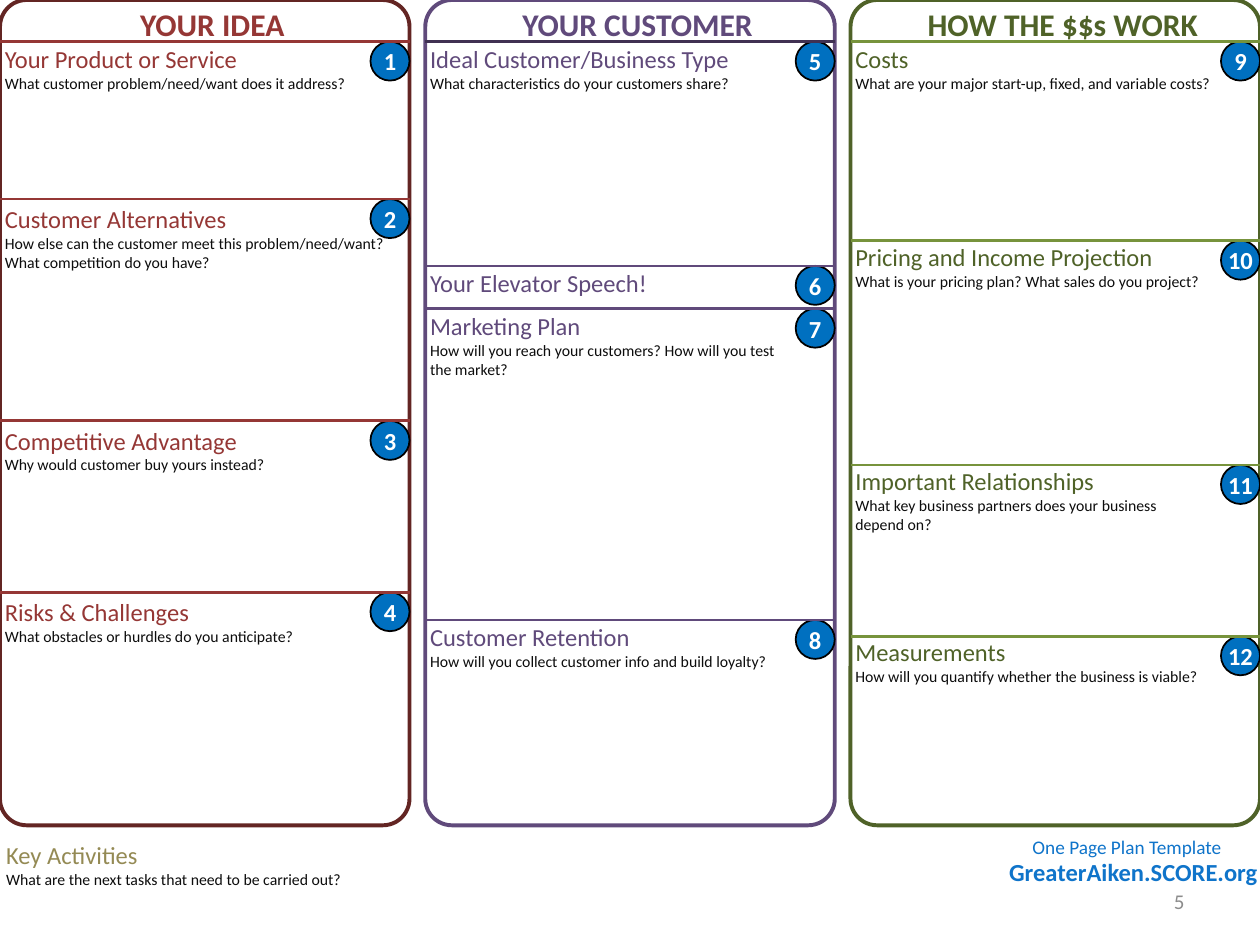
from lxml import etree
from pptx import Presentation
from pptx.dml.color import RGBColor
from pptx.enum.shapes import MSO_CONNECTOR, MSO_SHAPE
from pptx.enum.text import MSO_ANCHOR, PP_ALIGN
from pptx.oxml.ns import qn
from pptx.util import Inches, Pt

LINE = MSO_CONNECTOR.STRAIGHT
ROUND, OVAL = MSO_SHAPE.ROUNDED_RECTANGLE, MSO_SHAPE.OVAL
LEFT, MID, RIGHT = PP_ALIGN.LEFT, PP_ALIGN.CENTER, PP_ALIGN.RIGHT

# Grid: three equal columns across the slide
WIDE, HIGH = 10, 7.5
PITCH, COL = WIDE * 0.3375, WIDE * 0.325
HEAD, BODY = 0.33, 6.55
DOT = 0.31

# Column: title, frame, title colour, rule colours, text offset, notes
# Note: rule height, heading, lines of hint, text width
PLAN = [
    ("YOUR IDEA", "632523", "953735", "953735", "953735", -0.01, [
        (HEAD, "Your Product or Service",
         ["What customer problem/need/want does it address?"], 3.3),
        (1.58, "Customer Alternatives",
         ["How else can the customer meet this problem/need/want?",
          "What competition do you have?"], 3.3),
        (3.34, "Competitive Advantage",
         ["Why would customer buy yours instead?"], 3.3),
        (4.7, "Risks & Challenges",
         ["What obstacles or hurdles do you anticipate?"], 3.3)]),
    ("YOUR CUSTOMER", "604A7B", "604A7B", "403152", "604A7B", -0.03, [
        (HEAD, "Ideal Customer/Business Type",
         ["What characteristics do your customers share?"], 3.3),
        (2.11, "Your Elevator Speech!", [], 3.3),
        (2.45, "Marketing Plan",
         ["How will you reach your customers? How will you test",
          "the market?"], 3.3),
        (4.92, "Customer Retention",
         ["How will you collect customer info and build loyalty?"], 3.3)]),
    ("HOW THE $$s WORK", "4F6228", "4F6228", "77933C", "77933C", -0.04, [
        (HEAD, "Costs",
         ["What are your major start-up, fixed, and variable costs?"], 3.3),
        (1.91, "Pricing and Income Projection",
         ["What is your pricing plan? What sales do you project?"], 3.3),
        (3.69, "Important Relationships",
         ["What key business partners does your business depend on?"], 2.72),
        (5.05, "Measurements",
         ["How will you quantify whether the business is viable?"], 3.3)]),
]


def rgb(code):
    return RGBColor.from_string(code)


def write(x, y, w, h, text, size, color, bold=False, align=LEFT, hints=()):
    box = slide.shapes.add_textbox(*map(Inches, (x, y, w, h)))
    frame = box.text_frame
    frame.word_wrap = True
    para = frame.paragraphs[0]
    para.alignment = align
    for i, (words, pts, tint) in enumerate(
            [(text, size, color)] + [(hint, 9, "0D0D0D") for hint in hints]):
        if i:
            para.add_line_break()
        run = para.add_run()
        run.text = words
        run.font.name = "Calibri"
        run.font.size = Pt(pts)
        run.font.bold = bold
        run.font.color.rgb = rgb(tint)
    return frame


deck = Presentation()
deck.slide_width, deck.slide_height = Inches(WIDE), Inches(HIGH)
slide = deck.slides.add_slide(deck.slide_layouts[6])

# Page number
page = write(7.17, 6.95, 2.33, 0.4, "5", 12, "8C8C8C", align=RIGHT)
page.vertical_anchor = MSO_ANCHOR.MIDDLE

count = 0
for c, (title, edge, ink, top, rule, drop, notes) in enumerate(PLAN):
    x = c * PITCH

    # Frame and title
    card = slide.shapes.add_shape(
        ROUND, Inches(x), 0, Inches(COL), Inches(BODY))
    card.adjustments[0] = 0.065
    card.shadow.inherit = False
    card.fill.background()
    card.line.color.rgb = rgb(edge)
    card.line.width = Pt(2.25)
    write(x + 0.06, -0.01, COL, 0.4, title, 18, ink, True, MID)

    for n, (y, name, hints, width) in enumerate(notes):
        # Numbered badge
        count += 1
        dot = slide.shapes.add_shape(
            OVAL, *map(Inches, (x + COL - DOT, y, DOT, DOT)))
        dot.shadow.inherit = False
        dot.fill.solid()
        dot.fill.fore_color.rgb = rgb("0070C0")
        dot.line.color.rgb = rgb("000000")
        dot.line.width = Pt(1)
        frame = dot.text_frame
        frame.word_wrap = False
        frame.margin_left = frame.margin_right = 0
        frame.margin_top = frame.margin_bottom = 0
        frame.vertical_anchor = MSO_ANCHOR.MIDDLE
        para = frame.paragraphs[0]
        para.text = str(count)
        para.alignment = MID
        para.font.name = "Calibri"
        para.font.size = Pt(14)
        para.font.bold = True
        para.font.color.rgb = rgb("FFFFFF")

        # Heading with its question
        write(x - 0.06, y + (drop if n else -0.03), width,
              0.34 + 0.15 * len(hints), name, 14, ink, hints=hints)

        # Rule above the note
        bar = slide.shapes.add_connector(
            LINE, *map(Inches, (x, y, x + COL, y)))
        bar.line.color.rgb = rgb(rule if n else top)
        bar.line.width = Pt(1.5)
        etree.SubElement(bar._element.spPr, qn("a:effectLst"))

# Footer
write(-0.05, 6.62, COL, 0.49, "Key Activities", 14, "948A54",
      hints=["What are the next tasks that need to be carried out?"])
write(7.75, 6.75, 2.33, 0.34, "GreaterAiken.SCORE.org", 14, "0F74CA",
      True, RIGHT)
write(8.03, 6.58, 1.83, 0.29, "One Page Plan Template", 11, "0F74CA",
      align=MID)

deck.save("out.pptx")
